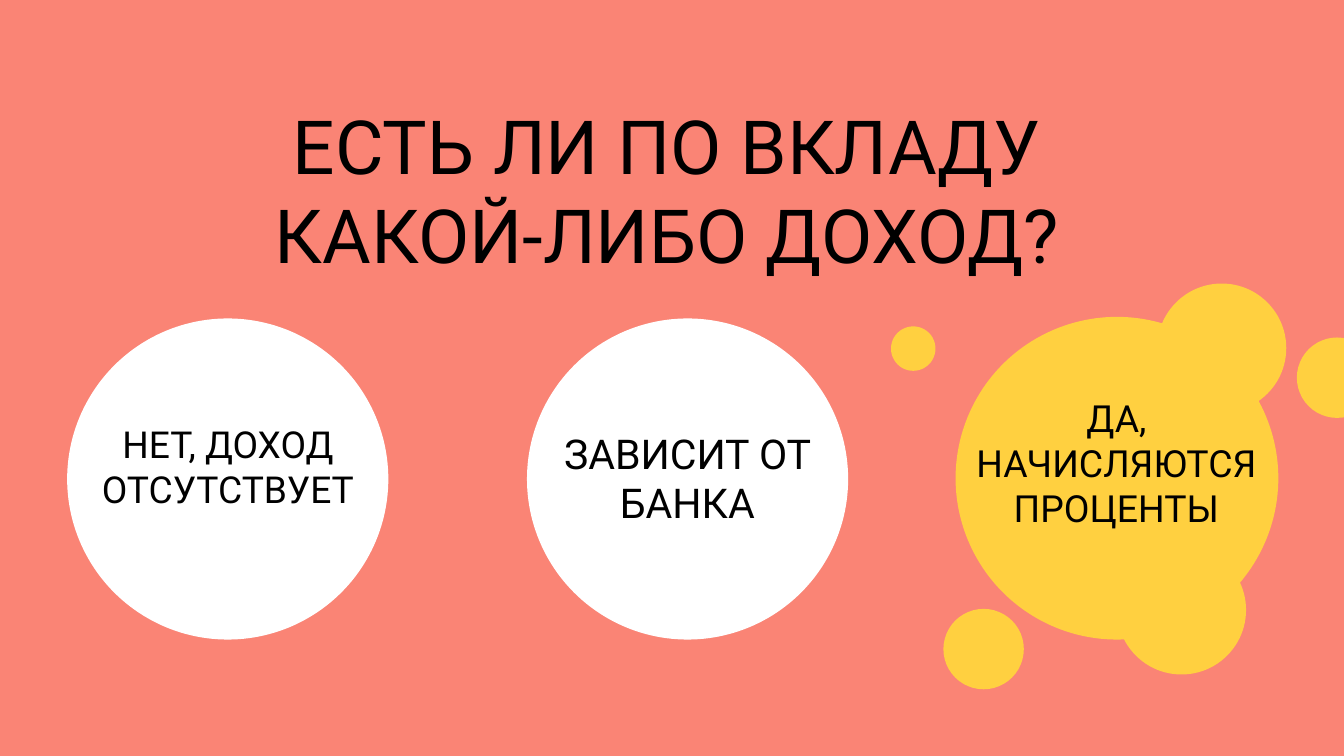
"""Builds a quiz slide: a question, two plain answers and a highlighted answer."""
from pptx import Presentation
from pptx.dml.color import RGBColor
from pptx.enum.shapes import MSO_SHAPE
from pptx.enum.text import MSO_ANCHOR, PP_ALIGN
from pptx.util import Cm, Pt

RECTANGLE, OVAL = MSO_SHAPE.RECTANGLE, MSO_SHAPE.OVAL
BOTTOM, CENTER = MSO_ANCHOR.BOTTOM, PP_ALIGN.CENTER

COLORS = {"coral": "FA8475", "white": "FFFFFF", "yellow": "FFD040", "black": "000000"}
FONT = "Roboto"
SLIDE_WIDTH, SLIDE_HEIGHT = 25.4, 14.29
INSET = 0.25

QUESTION = ("ЕСТЬ ЛИ ПО ВКЛАДУ КАКОЙ-ЛИБО ДОХОД?", 40, (2.79, 0.97, 19.63, 4.55))
ANSWERS = [
    ("НЕТ, ДОХОД ОТСУТСТВУЕТ", 19.9, (1.35, 7.49, 5.92, 2.41)),
    ("ЗАВИСИТ ОТ БАНКА", 22, (10.03, 7.8, 5.92, 2.41)),
    ("ДА,\vНАЧИСЛЯЮТСЯ ПРОЦЕНТЫ", 20, (17.91, 7.14, 6.38, 3.12)),
]
PLAIN_CIRCLES = [(1.27, 6.02, 6.07), (9.96, 6.02, 6.07)]
SPLASH_CIRCLES = [
    (18.06, 5.99, 6.1),
    (21.87, 5.36, 2.44),
    (21.11, 10.31, 2.44),
    (17.83, 11.51, 1.52),
    (24.51, 6.38, 1.52),
    (16.84, 6.17, 0.84),
]


def add_filled(shapes, kind, box, color):
    filled = shapes.add_shape(kind, *map(Cm, box))
    filled.shadow.inherit = False
    filled.fill.solid()
    filled.fill.fore_color.rgb = RGBColor.from_string(COLORS[color])
    filled.line.fill.background()


def add_circles(shapes, circles, color):
    for left, top, diameter in circles:
        add_filled(shapes, OVAL, (left, top, diameter, diameter), color)


def add_label(shapes, text, size, box):
    frame = shapes.add_textbox(*map(Cm, box)).text_frame
    frame.word_wrap = True
    frame.vertical_anchor = BOTTOM
    frame.margin_left = frame.margin_right = Cm(INSET)
    frame.margin_top = frame.margin_bottom = Cm(INSET)
    frame.text = text
    paragraph = frame.paragraphs[0]
    paragraph.alignment = CENTER
    for run in paragraph.runs:
        run.font.name = FONT
        run.font.size = Pt(size)
        run.font.color.rgb = RGBColor.from_string(COLORS["black"])


def main():
    deck = Presentation()
    deck.slide_width, deck.slide_height = Cm(SLIDE_WIDTH), Cm(SLIDE_HEIGHT)
    shapes = deck.slides.add_slide(deck.slide_layouts[6]).shapes

    add_filled(shapes, RECTANGLE, (0, 0, SLIDE_WIDTH, SLIDE_HEIGHT), "coral")
    add_circles(shapes, PLAIN_CIRCLES, "white")
    add_circles(shapes.add_group_shape().shapes, SPLASH_CIRCLES, "yellow")
    for label in [QUESTION, *ANSWERS]:
        add_label(shapes, *label)

    deck.save("out.pptx")


if __name__ == "__main__":
    main()
